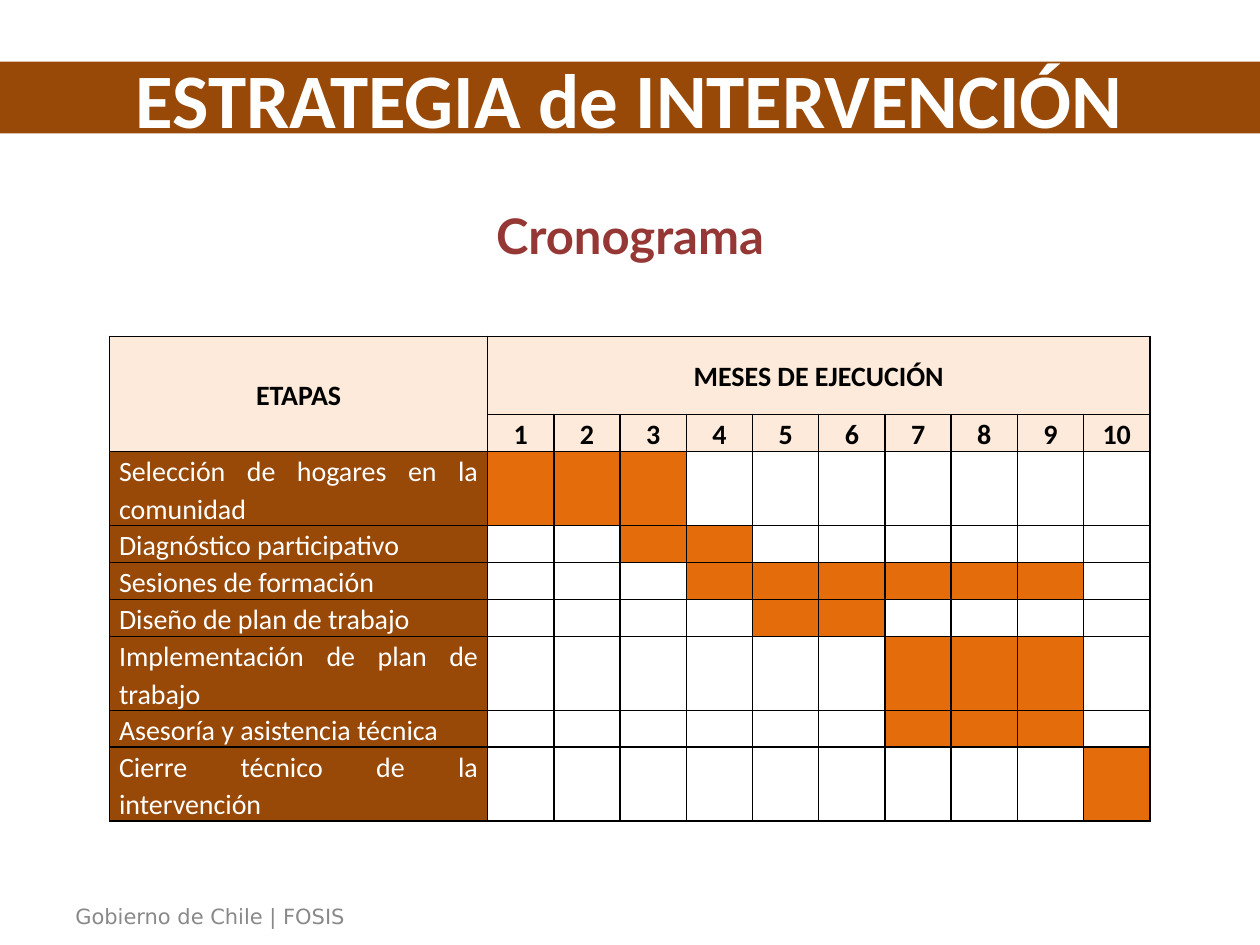
from lxml import etree
from pptx import Presentation
from pptx import util as u
from pptx.dml.color import RGBColor
from pptx.enum import text
from pptx.oxml.ns import qn

BROWN, ORANGE, CREAM = "984807", "E46C0A", "FDEADA"
WHITE, BLACK = "FFFFFF", "000000"
CENTER, JUSTIFY = text.PP_ALIGN.CENTER, text.PP_ALIGN.JUSTIFY
MIDDLE, TOP = text.MSO_ANCHOR.MIDDLE, text.MSO_ANCHOR.TOP

MONTHS = 10
STAGES = [  # stage, first month, last month, lines of text
    ("Selección de hogares en la comunidad", 1, 3, 2),
    ("Diagnóstico participativo", 3, 4, 1),
    ("Sesiones de formación", 4, 9, 1),
    ("Diseño de plan de trabajo", 5, 6, 1),
    ("Implementación de plan de trabajo", 7, 9, 2),
    ("Asesoría y asistencia técnica", 7, 9, 1),
    ("Cierre técnico de la intervención", 10, 10, 2),
]


def color(value):
    return RGBColor.from_string(value)


def set_values(target, values):
    for name, value in values.items():
        setattr(target, name, value)


class Deck:
    """Holds the table style and the current slide."""

    cell_size = u.Pt(16)
    cell_paragraph = {"line_spacing": 1.1, "space_after": u.Pt(6)}
    cell_margins = {"margin_left": u.Cm(0.19), "margin_right": u.Cm(0.19),
                    "margin_top": 0, "margin_bottom": 0}

    def __init__(self, slide):
        self.slide = slide

    def add_words(self, frame, words, ink, alignment, **font):
        paragraph = frame.paragraphs[0]
        paragraph.alignment = alignment
        run = paragraph.add_run()
        run.text = words
        run.font.color.rgb = color(ink)
        set_values(run.font, font)
        return paragraph

    def title(self, words, box):
        band = self.slide.shapes.title
        set_values(band, dict(zip(("left", "top", "width", "height"), map(u.Cm, box))))
        band.fill.solid()
        band.fill.fore_color.rgb = color(BROWN)
        set_values(band.text_frame, {"auto_size": text.MSO_AUTO_SIZE.NONE,
                                     "word_wrap": True, "vertical_anchor": MIDDLE})
        self.add_words(band.text_frame, words, WHITE, CENTER,
                       name="Calibri", size=u.Pt(44), bold=True)

    def label(self, words, box, ink, alignment, wrap=True, **font):
        frame = self.slide.shapes.add_textbox(*map(u.Cm, box)).text_frame
        set_values(frame, {"word_wrap": wrap, "vertical_anchor": MIDDLE if wrap else TOP})
        self.add_words(frame, words, ink, alignment, **font)

    def table(self, box, row_heights, first_width):
        grid = self.slide.shapes.add_table(
            len(row_heights), MONTHS + 1, *map(u.Cm, box)).table
        set_values(grid, {"first_row": False, "horz_banding": False})
        for row, height in zip(grid.rows, row_heights):
            row.height = u.Cm(height)
        month_width = (box[2] - first_width) / MONTHS
        for index, column in enumerate(grid.columns):
            column.width = u.Cm(month_width if index else first_width)
        return grid

    def cell(self, cell, fill=None, words="", ink=BLACK, alignment=CENTER,
             anchor=TOP, bold=True):
        set_values(cell, {**self.cell_margins, "vertical_anchor": anchor})
        self.borders(cell)
        if fill:
            cell.fill.solid()
            cell.fill.fore_color.rgb = color(fill)
        else:
            cell.fill.background()
        if words:
            paragraph = self.add_words(cell.text_frame, words, ink, alignment,
                                       name="Calibri", size=self.cell_size, bold=bold)
            set_values(paragraph, self.cell_paragraph)
        else:
            # Keeps an empty cell from stretching its row
            end = etree.SubElement(cell.text_frame.paragraphs[0]._p, qn("a:endParaRPr"))
            end.set("sz", str(int(self.cell_size.pt * 100)))

    def borders(self, cell):
        properties = cell._tc.get_or_add_tcPr()
        for position, side in enumerate(("lnL", "lnR", "lnT", "lnB")):
            line = etree.Element(qn(f"a:{side}"), w=str(u.Pt(1)))
            fill = etree.SubElement(line, qn("a:solidFill"))
            etree.SubElement(fill, qn("a:srgbClr"), val=BLACK)
            properties.insert(position, line)


def add_schedule(deck):
    line_height = 0.74
    heights = [1.58, line_height] + [lines * line_height for *_, lines in STAGES]
    grid = deck.table((2.21, 6.78, 20.98, sum(heights)), heights, 7.62)
    for column in range(MONTHS + 1):
        heading = {0: "ETAPAS", 1: "MESES DE EJECUCIÓN"}.get(column, "")
        deck.cell(grid.cell(0, column), CREAM, heading, anchor=MIDDLE)
        deck.cell(grid.cell(1, column), CREAM, str(column) if column else "")
    grid.cell(0, 0).merge(grid.cell(1, 0))
    grid.cell(0, 1).merge(grid.cell(0, MONTHS))

    for row, (stage, first, last, _) in enumerate(STAGES, start=2):
        deck.cell(grid.cell(row, 0), BROWN, stage, WHITE, JUSTIFY, bold=False)
        for month in range(1, MONTHS + 1):
            deck.cell(grid.cell(row, month), ORANGE if first <= month <= last else None)


def main():
    presentation = Presentation()
    set_values(presentation, {"slide_width": u.Cm(25.4), "slide_height": u.Cm(19.05)})
    deck = Deck(presentation.slides.add_slide(presentation.slide_layouts[5]))
    deck.title("ESTRATEGIA de INTERVENCIÓN", (0, 1.24, 25.4, 1.45))
    deck.label("Cronograma", (0, 3.94, 25.4, 1.6), "953735", CENTER,
               name="Lato", size=u.Pt(28), bold=True)
    add_schedule(deck)
    deck.label("Gobierno de Chile | FOSIS", (1.27, 18.08, 6.17, 0.76), "898989",
               text.PP_ALIGN.LEFT, wrap=False, name="DejaVu Sans", size=u.Pt(12))
    presentation.save("out.pptx")


if __name__ == "__main__":
    main()
